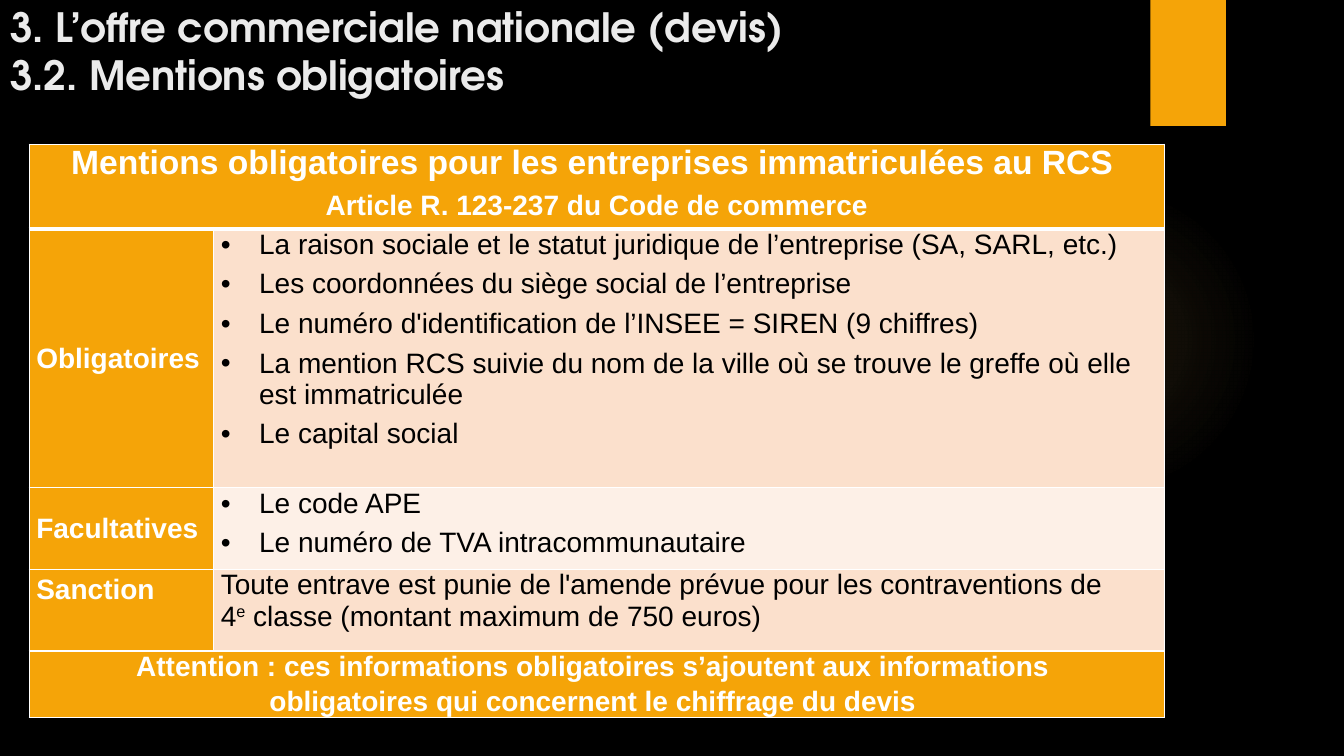
from dataclasses import dataclass
from lxml.etree import SubElement
from pptx import Presentation
from pptx.dml.color import RGBColor
from pptx.enum.shapes import MSO_SHAPE
from pptx.enum.text import MSO_ANCHOR, MSO_AUTO_SIZE, PP_ALIGN
from pptx.oxml import parse_xml
from pptx.oxml.ns import nsdecls, qn
from pptx.util import Inches, Pt

TITLE = "3. L’offre commerciale nationale (devis)\n3.2. Mentions obligatoires"
HEADER = [
    ("Mentions obligatoires pour les entreprises immatriculées au RCS ", 24),
    ("Article R. 123-237 du Code de commerce", 20),
]
SECTIONS = [
    ("Obligatoires", True, [
        "La raison sociale et le statut juridique de l’entreprise (SA, SARL, etc.)",
        "Les coordonnées du siège social de l’entreprise",
        "Le numéro d'identification de l’INSEE = SIREN (9 chiffres)",
        "La mention RCS suivie du nom de la ville où se trouve le greffe où elle est immatriculée",
        "Le capital social",
    ]),
    ("Facultatives", True, ["Le code APE", "Le numéro de TVA intracommunautaire"]),
    ("Sanction", False, [[
        ("Toute entrave est punie de l'amende prévue pour les contraventions de \n4", 0),
        ("e", 30),
        (" classe (montant maximum de 750 euros)", 0),
    ]]),
]
WARNING = [
    "Attention : ces informations obligatoires s’ajoutent aux informations ",
    "obligatoires qui concernent le chiffrage du devis ",
]
COLUMNS = [1.83, 9.43]
ROWS = [0.84, 2.57, 0.81, 0.81, 0.66]


@dataclass(frozen=True)
class Theme:
    background: str = "000000"
    accent: str = "F5A408"
    glow: str = "FAC96A"
    title: str = "EBEBEB"
    white: str = "FFFFFF"
    ink: str = "000000"
    bands: tuple = ("FBE0CC", "FDF0E7")
    title_font: str = "TeX Gyre Adventor"
    body_font: str = "Arial"
    title_size: float = 28.8
    body_size: float = 20


T = Theme()


def rgb(value):
    return RGBColor.from_string(value)


def write(p, text, font=T.body_font, size=T.body_size, color=T.white, bold=True,
          align=PP_ALIGN.LEFT, before=0, after=0, bullet=False):
    p.alignment, p.space_before, p.space_after = align, Pt(before), Pt(after)
    if bullet:
        pPr = p._p.get_or_add_pPr()
        pPr.set("marL", str(Inches(0.38)))
        pPr.set("indent", str(-Inches(0.38)))
        SubElement(pPr, qn("a:buFont")).set("typeface", T.body_font)
        SubElement(pPr, qn("a:buChar")).set("char", "•")
    for part, raised in [(text, 0)] if isinstance(text, str) else text:
        for i, line in enumerate(part.split("\n")):
            if i:
                p.add_line_break()
            r = p.add_run()
            r.text = line
            r.font.name, r.font.size, r.font.bold = font, Pt(size), bold
            r.font.color.rgb = rgb(color)
            if raised:
                r.font._element.set("baseline", str(raised * 1000))


def paragraph(tf, i):
    return tf.add_paragraph() if i else tf.paragraphs[0]


def add_block(shapes, kind, *box):
    sp = shapes.add_shape(kind, *map(Inches, box))
    sp.shadow.inherit = False
    sp.fill.solid()
    sp.fill.fore_color.rgb = rgb(T.accent)
    sp.line.fill.background()
    return sp


def add_glow(shapes):
    sp = add_block(shapes, MSO_SHAPE.OVAL, 9.41, 1.83, 3.08, 3.08)
    stops = "".join(
        f'<a:gs pos="{pos * 1000}"><a:srgbClr val="{T.glow}">'
        f'<a:alpha val="{alpha * 1000}"/></a:srgbClr></a:gs>'
        for pos, alpha in [(0, 7), (36, 6), (69, 0), (100, 0)])
    solid = sp._element.spPr.find(qn("a:solidFill"))
    solid.getparent().replace(solid, parse_xml(
        f'<a:gradFill {nsdecls("a")}><a:gsLst>{stops}</a:gsLst><a:path path="circle">'
        '<a:fillToRect l="50000" t="50000" r="50000" b="50000"/></a:path></a:gradFill>'))


def style_cell(cell, fill, top=1, bottom=1):
    cell.margin_left = cell.margin_right = Inches(0.07)
    cell.margin_top = cell.margin_bottom = 0
    tcPr = cell._tc.get_or_add_tcPr()
    for side, width in zip("LRTB", (1, 1, top, bottom)):
        ln = SubElement(tcPr, qn(f"a:ln{side}"), w=str(Pt(width)))
        SubElement(SubElement(ln, qn("a:solidFill")), qn("a:srgbClr")).set("val", T.white)
    cell.fill.solid()
    cell.fill.fore_color.rgb = rgb(fill)


def add_mentions(shapes):
    table = shapes.add_table(len(ROWS), len(COLUMNS), Inches(0.29), Inches(1.43),
                             Inches(sum(COLUMNS)), Inches(sum(ROWS))).table
    table.horz_banding = False
    for col, width in zip(table.columns, COLUMNS):
        col.width = Inches(width)
    for row, height in zip(table.rows, ROWS):
        row.height = Inches(height)
    last = len(ROWS) - 1
    for r in range(len(ROWS)):
        for c in range(len(COLUMNS)):
            banded = c and 0 < r < last
            style_cell(table.cell(r, c), T.bands[(r - 1) % 2] if banded else T.accent,
                       top=3 if r == 1 else 1, bottom=1 if r else 3)
    for r in (0, last):
        table.cell(r, 0).merge(table.cell(r, 1))
    for i, (text, size) in enumerate(HEADER):
        write(paragraph(table.cell(0, 0).text_frame, i), text, size=size,
              align=PP_ALIGN.CENTER, before=3 * i, after=3)
    for r, (label, bulleted, items) in enumerate(SECTIONS, 1):
        head, body = table.cell(r, 0), table.cell(r, 1)
        head.vertical_anchor = MSO_ANCHOR.MIDDLE if bulleted else MSO_ANCHOR.TOP
        if not bulleted:
            head.margin_top = Inches(0.05)
        write(head.text_frame.paragraphs[0], label)
        for i, item in enumerate(items):
            write(paragraph(body.text_frame, i), item, color=T.ink, bold=False,
                  before=3 if i else 0, after=3, bullet=bulleted)
    warning = table.cell(last, 0)
    warning.vertical_anchor = MSO_ANCHOR.MIDDLE
    for i, text in enumerate(WARNING):
        write(paragraph(warning.text_frame, i), text, align=PP_ALIGN.CENTER,
              after=0 if i else 3)


def add_title(s):
    title = s.shapes.title
    title.left, title.top, title.width, title.height = map(Inches, (0, 0.34, 9.65, 0.69))
    tf = title.text_frame
    tf.word_wrap, tf.auto_size = True, MSO_AUTO_SIZE.NONE
    tf.vertical_anchor = MSO_ANCHOR.BOTTOM
    write(tf.paragraphs[0], TITLE, font=T.title_font, size=T.title_size, color=T.title)


def main():
    prs = Presentation()
    prs.slide_width, prs.slide_height = Inches(13.33), Inches(7.5)
    s = prs.slides.add_slide(prs.slide_layouts[5])
    s.background.fill.solid()
    s.background.fill.fore_color.rgb = rgb(T.background)
    add_glow(s.shapes)
    add_block(s.shapes, MSO_SHAPE.RECTANGLE, 11.41, 0, 0.75, 1.25)
    add_title(s)
    add_mentions(s.shapes)
    prs.save("out.pptx")


if __name__ == "__main__":
    main()
